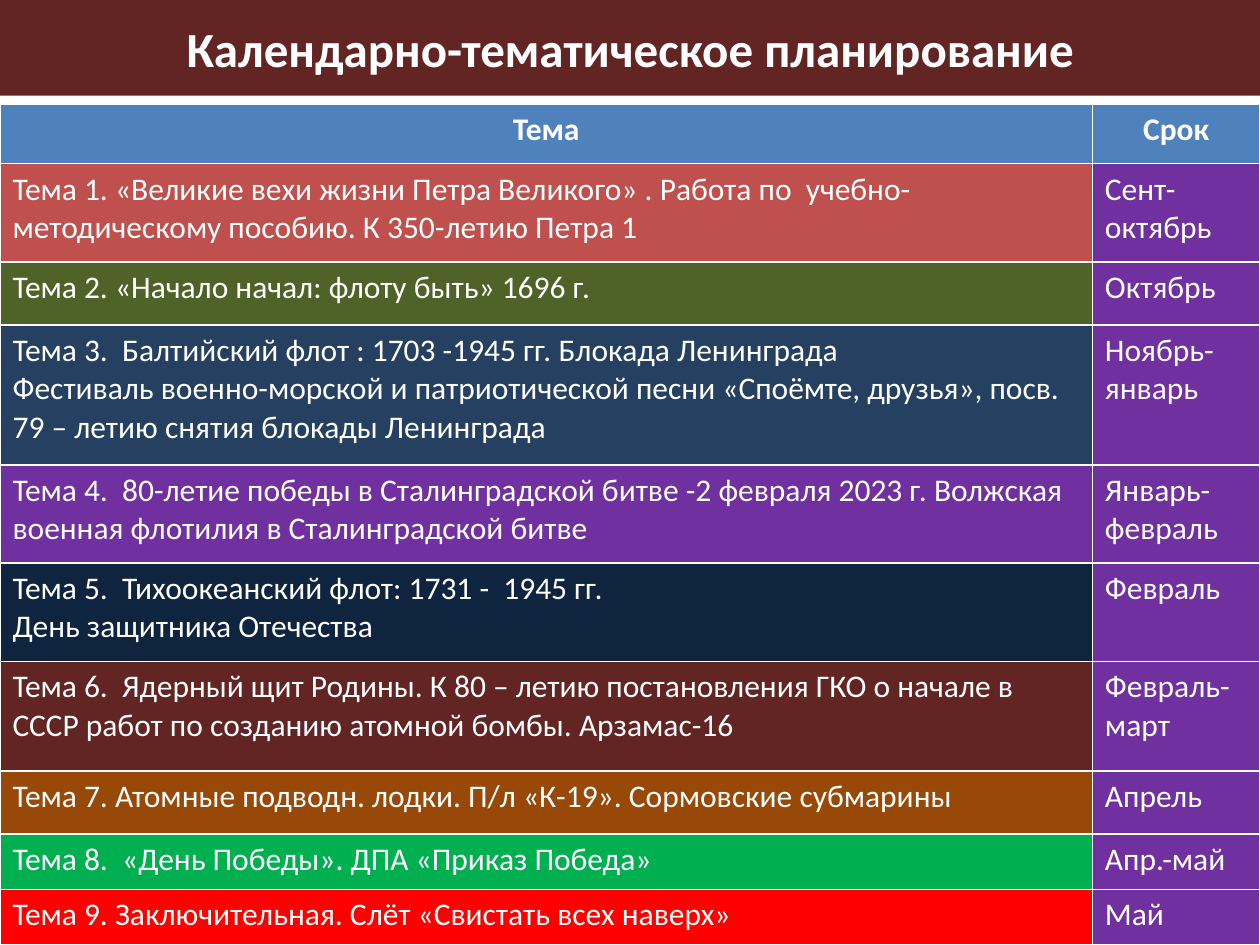
import pptx
import pptx.util
import pptx.dml.color
import pptx.enum.text

RGBColor = pptx.dml.color.RGBColor
Inches, Pt = pptx.util.Inches, pptx.util.Pt
PP_ALIGN = pptx.enum.text.PP_ALIGN

WHITE = RGBColor(0xFF, 0xFF, 0xFF)
BLUE = RGBColor(0x4F, 0x81, 0xBD)
CORAL = RGBColor(0xC0, 0x50, 0x4D)
OLIVE = RGBColor(0x4F, 0x62, 0x28)
STEEL = RGBColor(0x25, 0x40, 0x61)
PURPLE = RGBColor(0x70, 0x30, 0xA0)
NAVY = RGBColor(0x0F, 0x24, 0x3E)
MAROON = RGBColor(0x63, 0x25, 0x23)
BROWN = RGBColor(0x98, 0x48, 0x07)
GREEN = RGBColor(0x00, 0xB0, 0x50)
RED = RGBColor(0xFF, 0x00, 0x00)

FONT = "Calibri"
WIDTH, HEIGHT = 10, 7.5
TITLE_HEIGHT, TABLE_TOP = 0.76, 0.83
COLUMNS = (8.67, 1.33)

TITLE = "Календарно-тематическое планирование"
# row height, topic, term, topic fill, term fill
ROWS = [
    (0.47, "Тема", "Срок", BLUE, BLUE),
    (0.78, "Тема 1. «Великие вехи жизни Петра Великого» . Работа по  учебно-методическому "
           "пособию. К 350-летию Петра 1", "Сент-октябрь", CORAL, PURPLE),
    (0.5, "Тема 2. «Начало начал: флоту быть» 1696 г.", "Октябрь", OLIVE, PURPLE),
    (1.11, "Тема 3.  Балтийский флот : 1703 -1945 гг. Блокада Ленинграда\n"
           "Фестиваль военно-морской и патриотической песни «Споёмте, друзья», посв. "
           "79 – летию снятия блокады Ленинграда", "Ноябрь-январь", STEEL, PURPLE),
    (0.78, "Тема 4.  80-летие победы в Сталинградской битве -2 февраля 2023 г. Волжская "
           "военная флотилия в Сталинградской битве", "Январь-февраль", PURPLE, PURPLE),
    (0.78, "Тема 5.  Тихоокеанский флот: 1731 -  1945 гг.\nДень защитника Отечества",
     "Февраль", NAVY, PURPLE),
    (0.87, "Тема 6.  Ядерный щит Родины. К 80 – летию постановления ГКО о начале в СССР "
           "работ по созданию атомной бомбы. Арзамас-16", "Февраль-март", MAROON, PURPLE),
    (0.5, "Тема 7. Атомные подводн. лодки. П/л «К-19». Сормовские субмарины",
     "Апрель", BROWN, PURPLE),
    (0.44, "Тема 8.  «День Победы». ДПА «Приказ Победа»", "Апр.-май", GREEN, PURPLE),
    (0.44, "Тема 9. Заключительная. Слёт «Свистать всех наверх»", "Май", RED, PURPLE),
]


def write(tf, text, size, bold, align):
    tf.text = text
    for p in tf.paragraphs:
        p.alignment = align
        for r in p.runs:
            r.font.name = FONT
            r.font.size = Pt(size)
            r.font.bold = bold
            r.font.color.rgb = WHITE


def fill(target, color):
    target.fill.solid()
    target.fill.fore_color.rgb = color


def add_title(slide):
    sp = slide.shapes.title
    sp.left, sp.top = 0, 0
    sp.width, sp.height = Inches(WIDTH), Inches(TITLE_HEIGHT)
    fill(sp, MAROON)
    sp.text_frame.vertical_anchor = pptx.enum.text.MSO_ANCHOR.MIDDLE
    write(sp.text_frame, TITLE, 28, True, PP_ALIGN.CENTER)


def add_schedule(slide):
    """Add the table; its default style draws the white grid and thick header rule."""
    table = slide.shapes.add_table(
        len(ROWS), len(COLUMNS), 0, Inches(TABLE_TOP),
        Inches(WIDTH), Inches(HEIGHT - TABLE_TOP)).table
    for column, width in zip(table.columns, COLUMNS):
        column.width = Inches(width)
    for i, (height, topic, term, topic_fill, term_fill) in enumerate(ROWS):
        table.rows[i].height = Inches(height)
        header = i == 0
        align = PP_ALIGN.CENTER if header else PP_ALIGN.LEFT
        for j, (text, color) in enumerate([(topic, topic_fill), (term, term_fill)]):
            cell = table.cell(i, j)
            fill(cell, color)
            write(cell.text_frame, text, 18, header, align)


def main():
    prs = pptx.Presentation()
    prs.slide_width, prs.slide_height = Inches(WIDTH), Inches(HEIGHT)
    slide = prs.slides.add_slide(prs.slide_layouts[5])
    add_title(slide)
    add_schedule(slide)
    prs.save("out.pptx")


if __name__ == "__main__":
    main()
